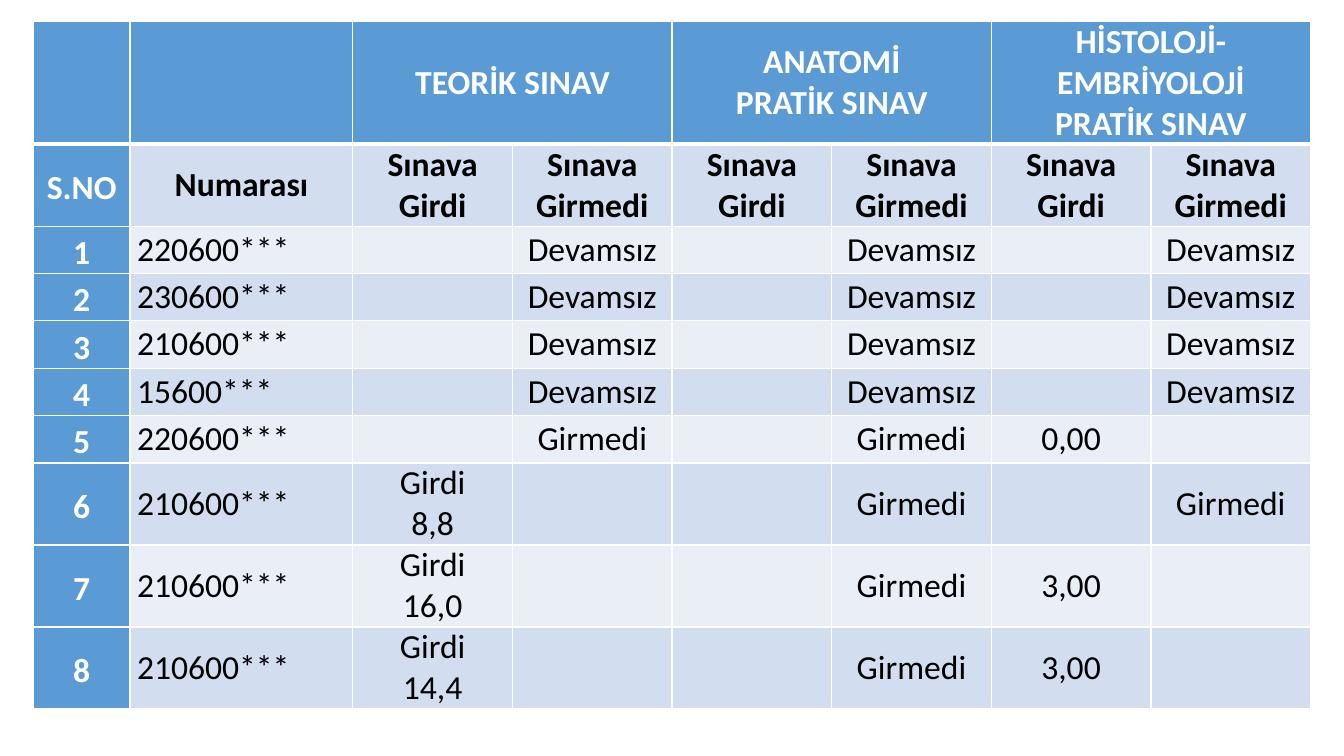
import dataclasses
import itertools

import pptx
import pptx.dml.color
import pptx.enum.text
import pptx.oxml
import pptx.oxml.ns
import pptx.util

EXAMS = ["TEORİK SINAV", "ANATOMİ\vPRATİK SINAV", "HİSTOLOJİ-EMBRİYOLOJİ\vPRATİK SINAV"]
HEADINGS = ["S.NO", "Numarası"] + ["Sınava Girdi", "Sınava Girmedi"] * len(EXAMS)
ABSENT = ["", "Devamsız"] * len(EXAMS)
STUDENTS = [
    ("220600***", *ABSENT),
    ("230600***", *ABSENT),
    ("210600***", *ABSENT),
    ("15600***", *ABSENT),
    ("220600***", "", "Girmedi", "", "Girmedi", "0,00", ""),
    ("210600***", "Girdi\n8,8", "", "", "Girmedi", "", "Girmedi"),
    ("210600***", "Girdi\n16,0", "", "", "Girmedi", "3,00", ""),
    ("210600***", "Girdi\n14,4", "", "", "Girmedi", "3,00", ""),
]


@dataclasses.dataclass(frozen=True)
class Theme:
    font: str = "Calibri"
    size: int = 24
    header: str = "5B9BD5"
    bands: tuple = ("EAEFF7", "D2DEEF")
    light: str = "FFFFFF"
    dark: str = "000000"
    thin: int = 1
    thick: int = 3


THEME = Theme()
WIDTH, HEIGHT = 13.33, 7.5
LEFT, TOP, TABLE_WIDTH = 0.33, 0.21, 12.67
NO_WIDTH, ID_WIDTH = 0.96, 2.21
EXAM_WIDTH = (TABLE_WIDTH - NO_WIDTH - ID_WIDTH) / (2 * len(EXAMS))
COLUMNS = [NO_WIDTH, ID_WIDTH] + [EXAM_WIDTH] * (2 * len(EXAMS))
ONE_LINE, TWO_LINES, THREE_LINES = 0.47, 0.81, 1.21

top_row = ["", ""] + [text for exam in EXAMS for text in (exam, "")]
GRID = [top_row, HEADINGS] + [[str(n), *row] for n, row in enumerate(STUDENTS, 1)]
ROWS = [THREE_LINES, TWO_LINES] + [
    TWO_LINES if any("\n" in text for text in row) else ONE_LINE for row in STUDENTS]


def rgb(value):
    return pptx.dml.color.RGBColor.from_string(value)


def set_borders(cell, row):
    """Draw white rules, with a thick one between the exam row and the headings."""
    tc_pr = cell._tc.get_or_add_tcPr()
    for i, side in enumerate("LRTB"):
        thick = (row, side) in ((0, "B"), (1, "T"))
        width = pptx.util.Pt(THEME.thick if thick else THEME.thin)
        tc_pr.insert(i, pptx.oxml.parse_xml(
            f'<a:ln{side} {pptx.oxml.ns.nsdecls("a")} w="{width}"><a:solidFill>'
            f'<a:srgbClr val="{THEME.light}"/></a:solidFill></a:ln{side}>'))


def write(cell, text, row, col):
    cell.vertical_anchor = pptx.enum.text.MSO_ANCHOR.MIDDLE
    cell.margin_left = cell.margin_right = pptx.util.Inches(0.07)
    cell.margin_top = cell.margin_bottom = 0
    tf = cell.text_frame
    student_id = row > 1 and col == 1
    for i, line in enumerate(text.split("\n")):
        p = tf.add_paragraph() if i else tf.paragraphs[0]
        p.alignment = pptx.enum.text.PP_ALIGN.LEFT if student_id else pptx.enum.text.PP_ALIGN.CENTER
        if col == 0:
            p.line_spacing = 1.15
        for j, part in enumerate(line.split("\v")):
            if j:
                p.add_line_break()
            r = p.add_run()
            r.text = part
            r.font.name = THEME.font
            r.font.size = pptx.util.Pt(THEME.size)
            r.font.bold = row < 2 or col == 0
            r.font.color.rgb = rgb(THEME.light if row == 0 or col == 0 else THEME.dark)


def main():
    prs = pptx.Presentation()
    prs.slide_width = pptx.util.Inches(WIDTH)
    prs.slide_height = pptx.util.Inches(HEIGHT)
    s = prs.slides.add_slide(prs.slide_layouts[6])
    box = [pptx.util.Inches(v) for v in (LEFT, TOP, TABLE_WIDTH, sum(ROWS))]
    table = s.shapes.add_table(len(ROWS), len(COLUMNS), *box).table
    table.first_row = table.horz_banding = False
    for column, width in zip(table.columns, COLUMNS):
        column.width = pptx.util.Inches(width)
    for table_row, height in zip(table.rows, ROWS):
        table_row.height = pptx.util.Inches(height)

    for row, col in itertools.product(range(len(ROWS)), range(len(COLUMNS))):
        cell = table.cell(row, col)
        cell.fill.solid()
        cell.fill.fore_color.rgb = rgb(THEME.header if row == 0 or col == 0 else THEME.bands[row % 2])
        set_borders(cell, row)
        if GRID[row][col]:
            write(cell, GRID[row][col], row, col)
    for col in range(2, len(COLUMNS), 2):
        table.cell(0, col).merge(table.cell(0, col + 1))
    prs.save("out.pptx")


if __name__ == "__main__":
    main()
